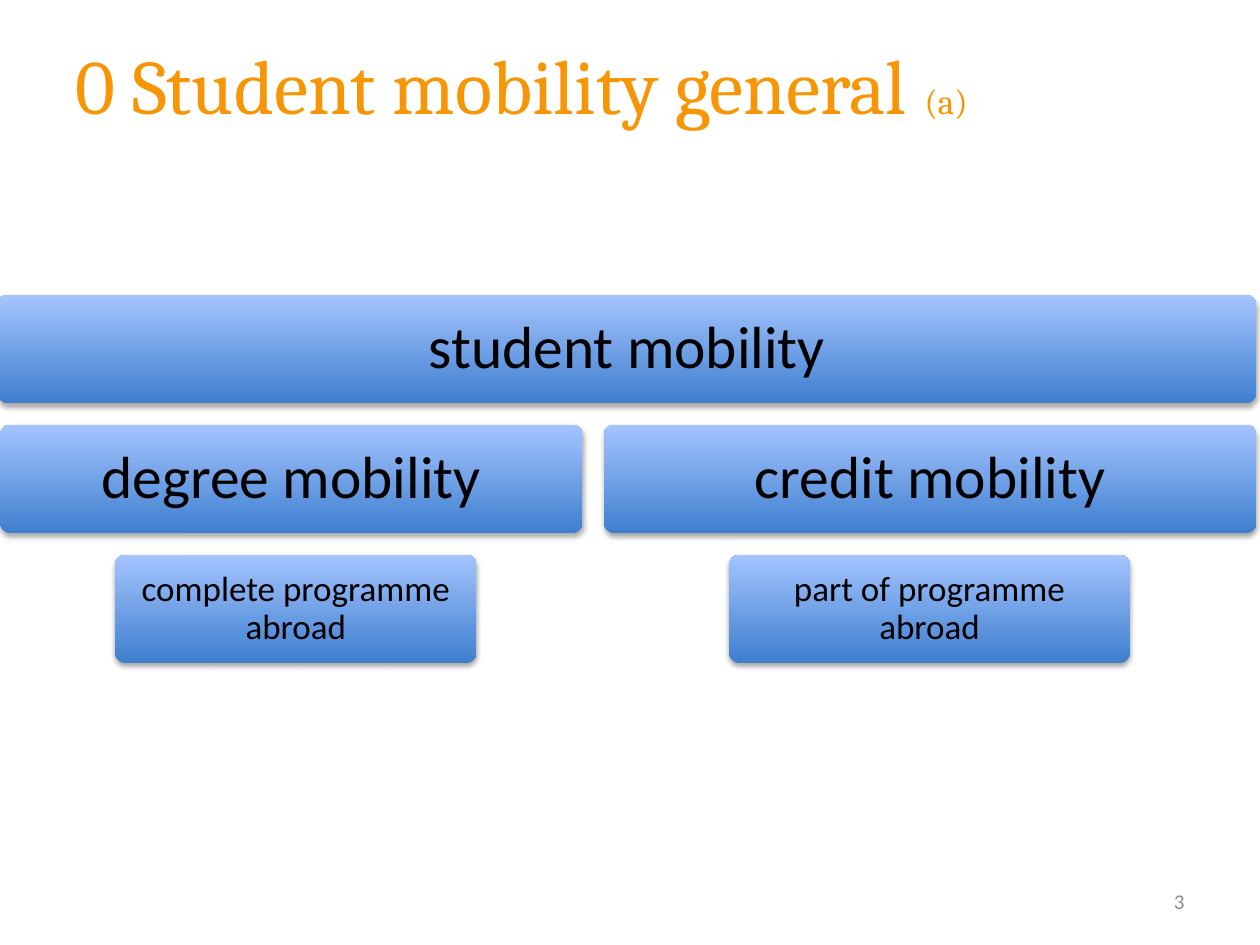
from lxml.etree import SubElement
from pptx import Presentation
from pptx.dml.color import RGBColor
from pptx.enum.shapes import MSO_SHAPE
from pptx.enum.text import MSO_ANCHOR, PP_ALIGN
from pptx.oxml.ns import qn
from pptx.util import Pt

ROW_TOP, ROW_STEP, ROW_HEIGHT = 168.5, 74.2, 62

# left, width, row, text, font size, inset
BLOCKS = [
    (-1.5, 719.5, 0, "student mobility", 34, 10),
    (0, 333, 1, "degree mobility", 34, 10),
    (65.7, 206.7, 2, "complete programme abroad", 20, 6),
    (345, 373, 1, "credit mobility", 34, 10),
    (416.6, 229.2, 2, "part of programme abroad", 20, 6),
]


def rgb(color):
    return RGBColor.from_string(color)


def write_text(paragraph, text, *, size, color="000000", font="Calibri",
               align=PP_ALIGN.LEFT, line_spacing=None):
    paragraph.alignment = align
    if line_spacing:
        paragraph.line_spacing = line_spacing
    run = paragraph.add_run()
    run.text = text
    run.font.size = Pt(size)
    run.font.name = font
    run.font.color.rgb = rgb(color)


def add_text_box(slide, left, top, width, height):
    """Add a wrapping, vertically centred box and return its paragraph."""
    box = slide.shapes.add_textbox(Pt(left), Pt(top), Pt(width), Pt(height))
    frame = box.text_frame
    frame.word_wrap = True
    frame.vertical_anchor = MSO_ANCHOR.MIDDLE
    return frame.paragraphs[0]


def add_soft_shadow(shape):
    shape.shadow.inherit = False
    effects = shape._element.spPr.find(qn("a:effectLst"))
    shadow = SubElement(effects, qn("a:outerShdw"), blurRad=str(Pt(3.1)),
                        dist=str(Pt(1.8)), dir="5400000", rotWithShape="0")
    color = SubElement(shadow, qn("a:srgbClr"), val="000000")
    SubElement(color, qn("a:alpha"), val="35000")


def add_block(slide, left, width, row, text, size, inset):
    top = ROW_TOP + row * ROW_STEP
    shape = slide.shapes.add_shape(MSO_SHAPE.ROUNDED_RECTANGLE, Pt(left),
                                   Pt(top), Pt(width), Pt(ROW_HEIGHT))
    shape.adjustments[0] = 0.1
    # Dark at the bottom, light at the top
    shape.fill.gradient()
    shape.fill.gradient_angle = 90
    for stop, color in zip(shape.fill.gradient_stops, ("3F7FCE", "A4C4FF")):
        stop.color.rgb = rgb(color)
    shape.line.fill.background()
    add_soft_shadow(shape)
    # Label
    frame = shape.text_frame
    frame.word_wrap = True
    frame.vertical_anchor = MSO_ANCHOR.MIDDLE
    frame.margin_left = frame.margin_right = Pt(inset)
    frame.margin_top = frame.margin_bottom = Pt(inset)
    write_text(frame.paragraphs[0], text, size=size, align=PP_ALIGN.CENTER,
               line_spacing=0.9)


def main():
    presentation = Presentation()
    presentation.slide_width, presentation.slide_height = Pt(720), Pt(540)
    slide = presentation.slides.add_slide(presentation.slide_layouts[6])

    # Title
    title = add_text_box(slide, 36, 3, 648, 90)
    title_format = {"color": "F79505", "font": "Cambria"}
    write_text(title, "0 Student mobility general ", size=44, **title_format)
    write_text(title, "(a)", size=20, **title_format)

    # Hierarchy of mobility types
    for block in BLOCKS:
        add_block(slide, *block)

    # Slide number
    number = add_text_box(slide, 516, 500.5, 168, 28.8)
    write_text(number, "3", size=12, color="8C8C8C", align=PP_ALIGN.RIGHT)

    presentation.save("out.pptx")


if __name__ == "__main__":
    main()
